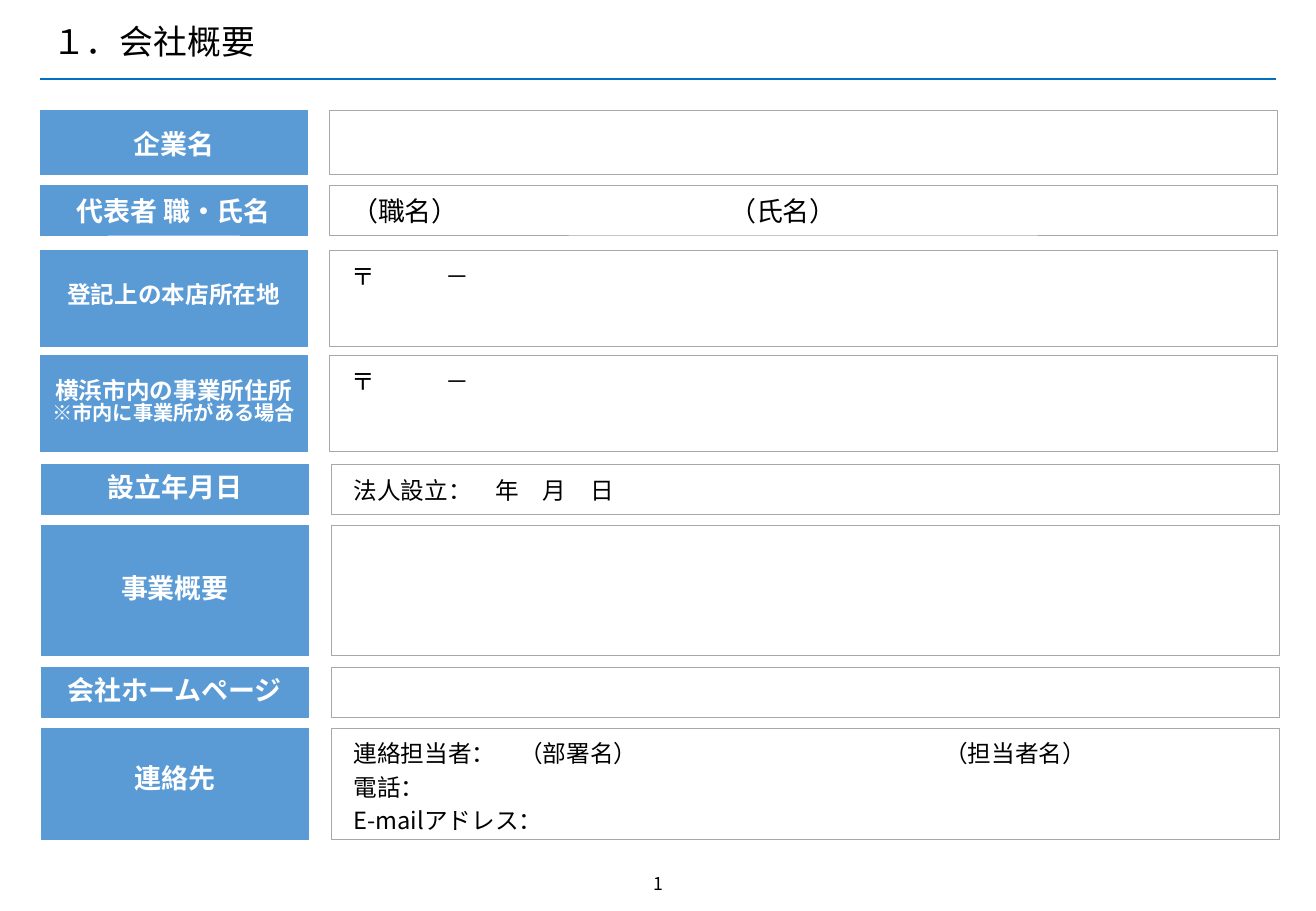
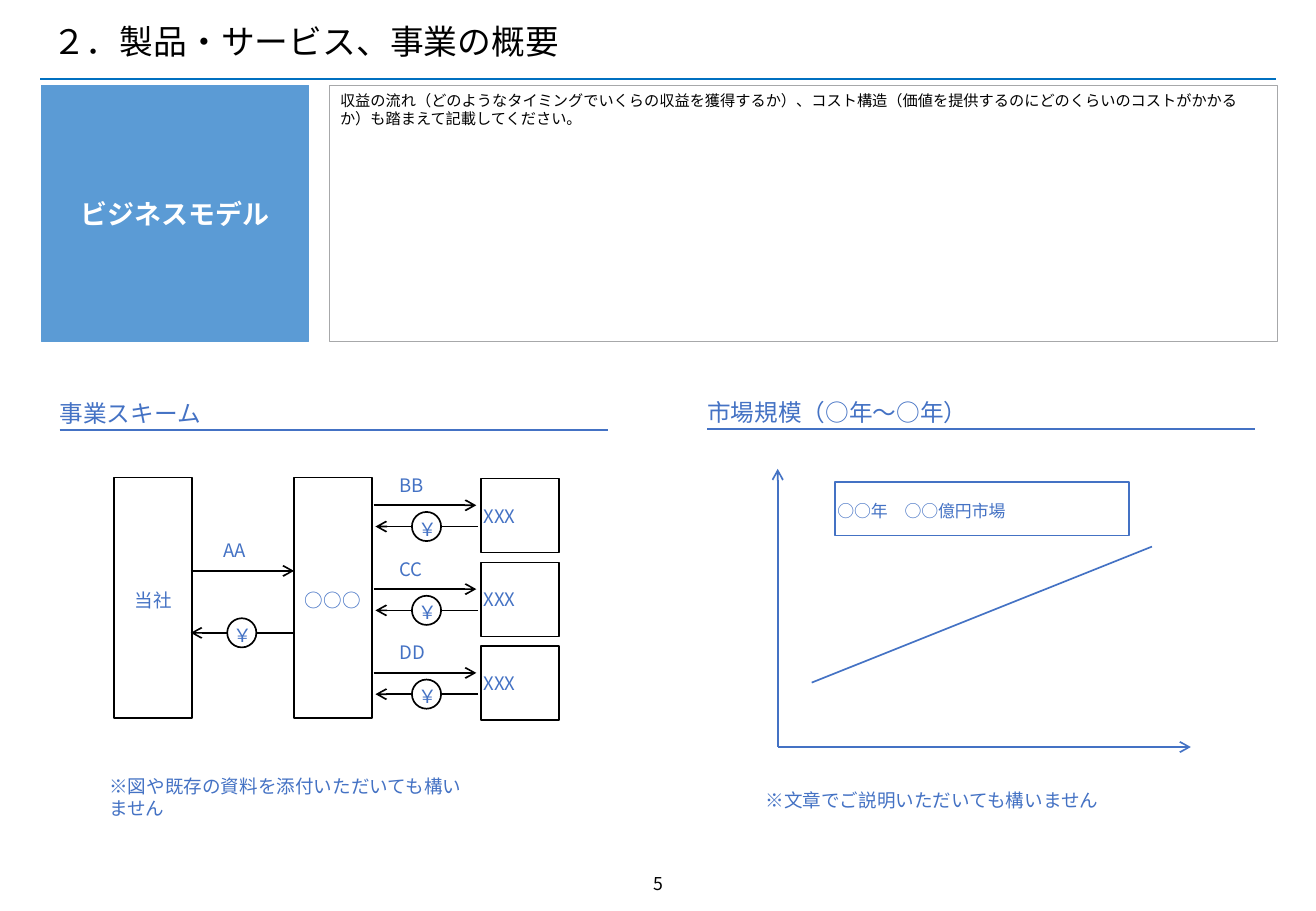
import dataclasses

import lxml.etree
import pptx
import pptx.dml.color
import pptx.enum.shapes
import pptx.enum.text
import pptx.oxml.ns
import pptx.util

SHAPE = pptx.enum.shapes.MSO_SHAPE
ALIGN = pptx.enum.text.PP_ALIGN
ANCHOR = pptx.enum.text.MSO_ANCHOR
UNIT = 0.1  # one grid column or row, in inches
COLUMNS, ROWS = 108.3, 75


@dataclasses.dataclass(frozen=True)
class Theme:
    font: str = "Noto Sans CJK JP"
    ink: str = "000000"
    paper: str = "FFFFFF"
    rule: str = "0070C0"
    label: str = "5B9BD5"
    border: str = "A7A8AA"
    accent: str = "4472C4"
    title: float = 20
    large: float = 16
    body: float = 14
    note: float = 12
    diagram: float = 11
    number: float = 10.5
    small: float = 10
    hint: float = 9
    hairline: float = 0.5
    stroke: float = 1


THEME = Theme()


def grid(count):
    return pptx.util.Inches(round(count * UNIT, 3))


def colour(code):
    return pptx.dml.color.RGBColor.from_string(code)


def add_element(parent, tag, **attributes):
    return lxml.etree.SubElement(parent, pptx.oxml.ns.qn(tag), attributes)


class Sheet:
    """Draws styled elements on the current page."""

    def __init__(self, deck):
        self.deck = deck
        self.page = None

    def new_page(self, title, number):
        self.page = self.deck.slides.add_slide(self.deck.slide_layouts[6])
        self.line((3.3, 6.5), (105, 6.5), THEME.rule)
        self.text((3.3, 1.5, 93.4, 4.2), title, size=THEME.title,
                  spacing=0.9, anchor=ANCHOR.MIDDLE)
        self.text((49.9, 71.4, 8.6, 2.9), number, size=THEME.number,
                  align=ALIGN.CENTER)

    def set_text(self, box, text, size=THEME.body, ink=THEME.ink, bold=False,
                 align=ALIGN.LEFT, anchor=ANCHOR.TOP, inset=(1, 0.5, 1, 0.5),
                 spacing=None, wrap=True, tab=None, last_size=None):
        frame = box.text_frame
        frame.word_wrap = wrap
        frame.vertical_anchor = anchor
        (frame.margin_left, frame.margin_top,
         frame.margin_right, frame.margin_bottom) = map(grid, inset)
        frame.text = text
        for para in frame.paragraphs:
            para.alignment = align
            if spacing:
                para.line_spacing = spacing
            if tab:
                stops = add_element(para._p.get_or_add_pPr(), "a:tabLst")
                add_element(stops, "a:tab", pos=str(grid(tab)), algn="l")
            for span in para.runs:
                span.font.size = pptx.util.Pt(size)
                span.font.bold = bold
                span.font.color.rgb = colour(ink)
                span.font.name = THEME.font
                add_element(span._r.get_or_add_rPr(), "a:ea",
                            typeface=THEME.font)
        if last_size:
            for span in frame.paragraphs[-1].runs:
                span.font.size = pptx.util.Pt(last_size)

    def text(self, area, text, **style):
        box = self.page.shapes.add_textbox(*map(grid, area))
        self.set_text(box, text, **style)

    def box(self, area, text="", fill=THEME.paper, border=None,
            width=THEME.stroke, kind=SHAPE.RECTANGLE, **style):
        box = self.page.shapes.add_shape(kind, *map(grid, area))
        box.shadow.inherit = False
        if fill:
            box.fill.solid()
            box.fill.fore_color.rgb = colour(fill)
        else:
            box.fill.background()
        if border:
            box.line.color.rgb = colour(border)
            box.line.width = pptx.util.Pt(width)
        else:
            box.line.fill.background()
        if text:
            self.set_text(box, text, **style)

    def line(self, start, end, ink=THEME.ink, arrow=False):
        line = self.page.shapes.add_connector(
            pptx.enum.shapes.MSO_CONNECTOR.STRAIGHT,
            *map(grid, (*start, *end)))
        line.line.color.rgb = colour(ink)
        line.line.width = pptx.util.Pt(THEME.stroke)
        if arrow:
            add_element(line.line._get_or_add_ln(), "a:tailEnd", type="arrow")
        add_element(line._element.spPr, "a:effectLst")

    def label(self, left, top, height, text, size=THEME.large,
              spacing=1.06, last_size=None):
        self.box((left, top, 22, height), text, THEME.label, THEME.label,
                 THEME.hairline, size=size, ink=THEME.paper, bold=True,
                 align=ALIGN.CENTER, anchor=ANCHOR.MIDDLE, inset=(0.8,) * 4,
                 spacing=spacing, last_size=last_size)

    def field(self, left, top, height, text="", anchor=ANCHOR.MIDDLE,
              spacing=1.06, **style):
        self.box((left, top, 78, height), text, THEME.paper, THEME.border,
                 THEME.hairline, anchor=anchor, spacing=spacing,
                 inset=(1.8, 0.8, 0.8, 0.8), **style)

    def node(self, area, text, border=THEME.ink, fill=THEME.paper,
             size=THEME.diagram, spacing=1.2, **style):
        self.box(area, text, fill, border, size=size, ink=THEME.accent,
                 anchor=ANCHOR.MIDDLE, inset=(0.2,) * 4, wrap=False,
                 spacing=spacing, **style)

    def exchange(self, left, right, top, gap, text, text_left, coin_left):
        """Labelled arrow to the right, payment arrow back below it."""
        self.line((left, top), (right, top), arrow=True)
        self.text((text_left, top - 3.1, 6.4, 2.9), text,
                  size=THEME.diagram, ink=THEME.accent)
        back = top + gap
        shift = 0 if gap > 2 else 0.15
        self.line((right + shift, back), (left + shift, back), arrow=True)
        self.node((coin_left, back - 1.2, 2.4, 2.4), "￥", kind=SHAPE.OVAL)

    def heading(self, left, top, text):
        self.line((left, top + 3), (left + 45.1, top + 3), THEME.accent)
        self.text((left, top, 46.1, 2.6), text, ink=THEME.accent,
                  inset=(0,) * 4, spacing=1.2)

    def remark(self, left, top, text):
        self.text((left, top, 30.3, 3.1), text, size=THEME.diagram,
                  ink=THEME.accent, anchor=ANCHOR.MIDDLE, inset=(0.2,) * 4,
                  wrap=False)


def company_page(sheet):
    sheet.new_page("１．会社概要", "1")
    tight, normal, loose = map(pptx.util.Pt, (12, 16, 20))
    address = dict(text="〒\t－", anchor=ANCHOR.TOP, tab=7.78)
    small = dict(size=THEME.body, spacing=tight)
    contact = ("連絡担当者：　（部署名）\t（担当者名）\n"
               "電話：\nE-mailアドレス：")

    # Form rows: top, height, label, label style, field style
    upper = [
        (9.1, 5.3, "企業名", {}, {}),
        (15.25, 4.1, "代表者 職・氏名", {},
         dict(text="（職名）\t（氏名）", size=THEME.large, tab=31.11)),
        (20.6, 7.9, "登記上の本店所在地", small, address),
        (29.3, 7.9, "横浜市内の事業所住所\n※市内に事業所がある場合",
         dict(small, last_size=THEME.note), address),
    ]
    lower = [
        (38.25, 4.1, "設立年月日", dict(spacing=normal),
         dict(text="法人設立：　年　月　日")),
        (43.3, 10.7, "事業概要", dict(spacing=normal), {}),
        (54.95, 4.1, "会社ホームページ", dict(spacing=normal), {}),
        (60, 9.1, "連絡先", dict(spacing=tight),
         dict(text=contact, spacing=loose, tab=48.61)),
    ]
    for label_left, field_left, rows in ((3.3, 27.1, upper),
                                         (3.4, 27.3, lower)):
        for top, height, name, label_style, field_style in rows:
            sheet.label(label_left, top, height, name, **label_style)
            sheet.field(field_left, top, height, **field_style)


def business_page(sheet):
    sheet.new_page("２．製品・サービス、事業の概要", "5")

    # Business model
    sheet.label(3.4, 7, 21.1, "ビジネスモデル")
    sheet.field(27.1, 7, 21.1)
    sheet.text((27, 7, 78.1, 2.5),
               "収益の流れ（どのようなタイミングでいくらの収益を獲得するか）、"
               "コスト構造（価値を提供するのにどのくらいのコストがかかるか）"
               "も踏まえて記載してください。", size=THEME.hint)

    # Business scheme
    sheet.heading(4.9, 32.4, "事業スキーム")
    for left, name in ((9.4, "当社"), (24.2, "○○○")):
        sheet.node((left, 39.3, 6.4, 19.8), name, align=ALIGN.CENTER)
    sheet.exchange(15.7, 24.2, 47, 5.1, "AA", 17.4, 18.7)
    for index, name in enumerate(("BB", "CC", "DD")):
        top = 39.4 + 6.9 * index
        sheet.exchange(30.75, 39.2, top + 2.2, 1.75, name, 31.9, 33.9)
        sheet.node((39.6, top, 6.4, 6.1), "XXX", spacing=None)
    sheet.remark(8.8, 64.1, "※図や既存の資料を添付いただいても構いません")

    # Market size
    sheet.heading(58.2, 32.3, "市場規模（○年～○年）")
    origin = (64, 61.5)
    for end in ((98, 61.5), (64, 38.6)):
        sheet.line(origin, end, THEME.accent, arrow=True)
    sheet.line((66.8, 56.2), (94.8, 45), THEME.accent)
    sheet.node((68.7, 39.7, 24.2, 4.4), "○○年　○○億円市場",
               THEME.accent, fill=None, size=THEME.small)
    sheet.remark(62.8, 64.3, "※文章でご説明いただいても構いません")


def main():
    deck = pptx.Presentation()
    deck.slide_width, deck.slide_height = grid(COLUMNS), grid(ROWS)
    sheet = Sheet(deck)
    company_page(sheet)
    business_page(sheet)
    deck.save("out.pptx")


if __name__ == "__main__":
    main()
